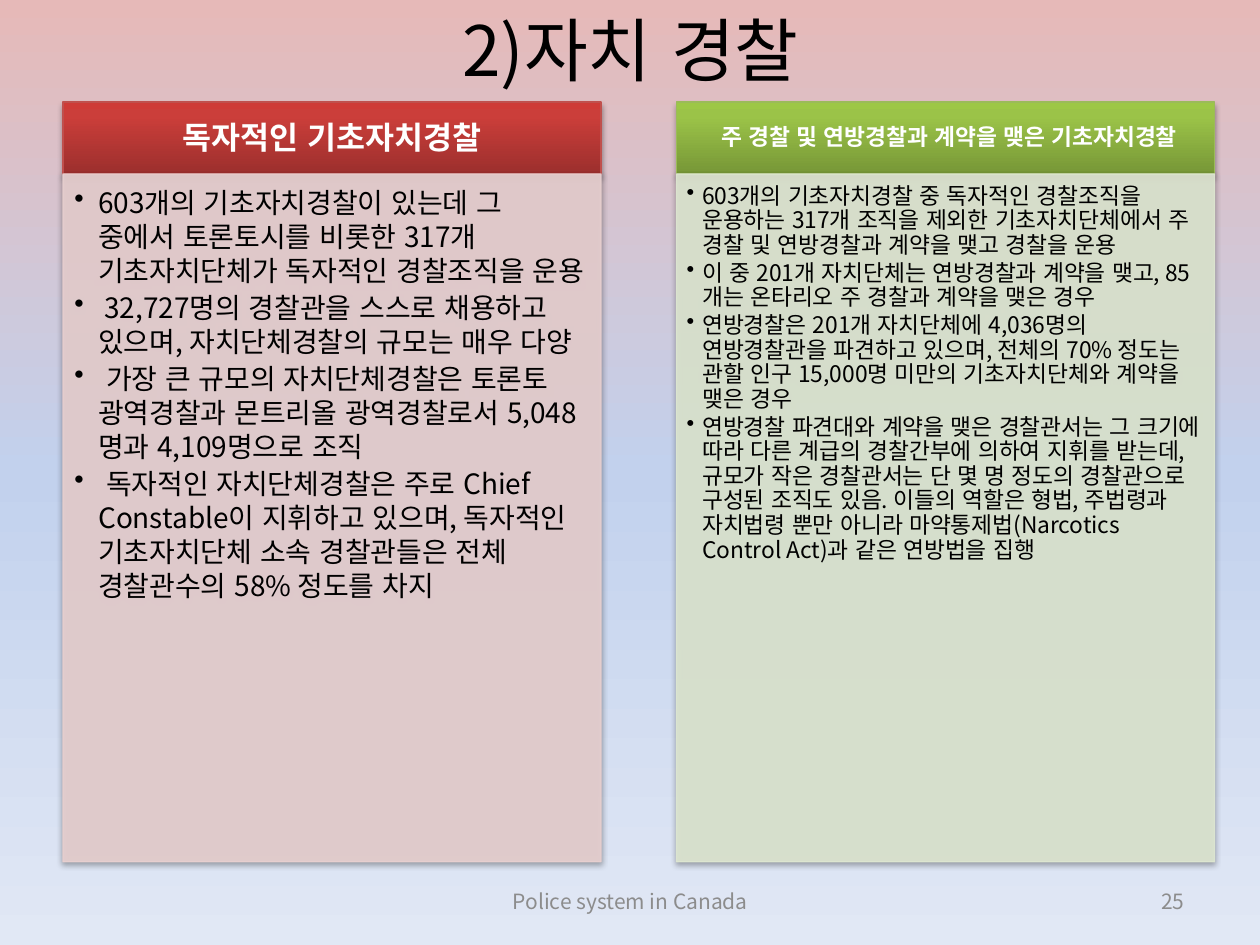
from dataclasses import dataclass

from lxml.etree import SubElement
from pptx import Presentation
from pptx.dml.color import RGBColor
from pptx.enum.lang import MSO_LANGUAGE_ID as Language
from pptx.enum.shapes import MSO_SHAPE as ShapeKind
from pptx.enum.text import MSO_ANCHOR as Anchor, PP_ALIGN as Align
from pptx.oxml.ns import qn
from pptx.util import Pt

FONT = "Noto Sans CJK KR"
COLORS = {
    "black": "000000",
    "white": "FFFFFF",
    "gray": "8C8C8C",
    "red line": "C0504D",
    "red panel": "E8D0D0",
    "green line": "9BBB59",
    "green panel": "DEE7D1",
}
GRADIENTS = {
    "background": {0: "E6B9B8", 50: "C2D1ED", 100: "E1E8F5"},
    "red": {0: "9C2F2D", 80: "CB3E3A", 100: "CE3B37"},
    "green": {0: "779737", 80: "9BC348", 100: "9DC746"},
}
COLUMN_WIDTH = 307.5
HEADER_TOP, HEADER_HEIGHT = 58.3, 41.1
PANEL_HEIGHT = 393.1


@dataclass(frozen=True)
class Label:
    text: str
    left: float
    top: float
    width: float
    height: float
    size: float
    color: str
    align: Align


@dataclass(frozen=True)
class Column:
    heading: str
    items: tuple[str, ...]
    left: float
    hue: str
    heading_size: float
    heading_insets: tuple[float, ...]
    size: float
    line_pitch: float
    indent: float
    insets: tuple[float, ...]


LABELS = (
    Label("2)자치 경찰 ", 161.3, 0, 409, 55.4, 39.6, "black", Align.CENTER),
    Label("Police system in Canada", 246.2, 500.4, 228.2, 28.8, 12, "gray", Align.CENTER),
    Label("25", 516.2, 500.4, 167.8, 28.8, 12, "gray", Align.RIGHT),
)
COLUMNS = (
    Column(
        "독자적인 기초자치경찰",
        (
            "603개의 기초자치경찰이 있는데 그 중에서 토론토시를 비롯한 317개 기초자치단체가 독자적인 경찰조직을 운용",
            " 32,727명의 경찰관을 스스로 채용하고 있으며, 자치단체경찰의 규모는 매우 다양",
            " 가장 큰 규모의 자치단체경찰은 토론토 광역경찰과 몬트리올 광역경찰로서 5,048명과 4,109명으로 조직",
            " 독자적인 자치단체경찰은 주로 Chief Constable이 지휘하고 있으며, 독자적인 기초자치단체 소속 "
            "경찰관들은 전체 경찰관수의 58% 정도를 차지",
        ),
        36, "red", 18, (10, 5.8, 10, 5.8), 16, 19.4, 13.7, (6.5, 6.5, 8.6, 10),
    ),
    Column(
        " 주 경찰 및 연방경찰과 계약을 맺은 기초자치경찰",
        (
            "603개의 기초자치경찰 중 독자적인 경찰조직을 운용하는 317개 조직을 제외한 기초자치단체에서 "
            "주 경찰 및 연방경찰과 계약을 맺고 경찰을 운용",
            "이 중 201개 자치단체는 연방경찰과 계약을 맺고, 85개는 온타리오 주 경찰과 계약을 맺은 경우",
            "연방경찰은 201개 자치단체에 4,036명의 연방경찰관을 파견하고 있으며, 전체의 70% 정도는 "
            "관할 인구 15,000명 미만의 기초자치단체와 계약을 맺은 경우",
            "연방경찰 파견대와 계약을 맺은 경찰관서는 그 크기에 따라 다른 계급의 경찰간부에 의하여 지휘를 받는데, "
            "규모가 작은 경찰관서는 단 몇 명 정도의 경찰관으로 구성된 조직도 있음. 이들의 역할은 형법, 주법령과 "
            "자치법령 뿐만 아니라 마약통제법(Narcotics Control Act)과 같은 연방법을 집행",
        ),
        386.6, "green", 13, (7.2, 4.3, 7.2, 4.3), 13, 14.05, 8.9, (5.8, 5.8, 7.2, 7.9),
    ),
)


def rgb(name: str) -> RGBColor:
    return RGBColor.from_string(COLORS[name])


def format_runs(paragraph, size: float, color: str, bold: bool = False) -> None:
    for run in paragraph.runs:
        font = run.font
        font.size, font.bold, font.name = Pt(size), bold, FONT
        font.color.rgb = rgb(color)
        font.language_id = Language.KOREAN
        SubElement(font._element, qn("a:ea"), typeface=FONT)


def fill_gradient(fill, element, stops: dict[int, str], angle: float) -> None:
    fill.gradient()
    fill.gradient_angle = angle
    stop_list = next(element.iter(qn("a:gsLst")))
    for stop in list(stop_list):
        stop_list.remove(stop)
    for position, color in stops.items():
        stop = SubElement(stop_list, qn("a:gs"), pos=str(position * 1000))
        SubElement(stop, qn("a:srgbClr"), val=color)


def add_block(slide, left: float, top: float, height: float, line: str, insets: tuple[float, ...]):
    shape = slide.shapes.add_shape(
        ShapeKind.RECTANGLE, Pt(left), Pt(top), Pt(COLUMN_WIDTH), Pt(height)
    )
    shape.line.color.rgb = rgb(line)
    shape.line.width = Pt(0.75)
    shape.shadow.inherit = False
    effects = next(shape.element.iter(qn("a:effectLst")))
    shadow = SubElement(
        effects, qn("a:outerShdw"), blurRad=str(Pt(3.1)), dist=str(Pt(1.8)),
        dir="5400000", rotWithShape="0",
    )
    color = SubElement(shadow, qn("a:srgbClr"), val=COLORS["black"])
    SubElement(color, qn("a:alpha"), val="35000")
    frame = shape.text_frame
    frame.word_wrap = True
    frame.margin_left, frame.margin_top, frame.margin_right, frame.margin_bottom = map(Pt, insets)
    return shape


def add_heading(slide, column: Column) -> None:
    shape = add_block(
        slide, column.left, HEADER_TOP, HEADER_HEIGHT, f"{column.hue} line", column.heading_insets
    )
    fill_gradient(shape.fill, shape.element, GRADIENTS[column.hue], 90)
    frame = shape.text_frame
    frame.vertical_anchor = Anchor.MIDDLE
    frame.text = column.heading
    paragraph = frame.paragraphs[0]
    paragraph.alignment = Align.CENTER
    paragraph.line_spacing = Pt(column.heading_size * 1.1)
    format_runs(paragraph, column.heading_size, "white", bold=True)


def add_panel(slide, column: Column) -> None:
    color = f"{column.hue} panel"
    shape = add_block(
        slide, column.left, HEADER_TOP + HEADER_HEIGHT, PANEL_HEIGHT, color, column.insets
    )
    shape.fill.solid()
    shape.fill.fore_color.rgb = rgb(color)
    for tint in shape.element.iter(qn("a:srgbClr")):
        if tint.get("val") == COLORS[color]:
            SubElement(tint, qn("a:alpha"), val="90000")
    frame = shape.text_frame
    frame.vertical_anchor = Anchor.TOP
    frame.text = "\n".join(column.items)
    for paragraph in frame.paragraphs:
        paragraph.alignment = Align.LEFT
        paragraph.line_spacing = Pt(column.line_pitch)
        paragraph.space_after = Pt(1.8)
        properties = paragraph._p.get_or_add_pPr()
        properties.set("marL", str(Pt(column.indent)))
        properties.set("indent", str(Pt(-column.indent)))
        SubElement(properties, qn("a:buChar"), char="•")
        format_runs(paragraph, column.size, "black")


def add_label(slide, label: Label) -> None:
    shape = slide.shapes.add_textbox(
        Pt(label.left), Pt(label.top), Pt(label.width), Pt(label.height)
    )
    frame = shape.text_frame
    frame.word_wrap = True
    frame.vertical_anchor = Anchor.MIDDLE
    frame.text = label.text
    paragraph = frame.paragraphs[0]
    paragraph.alignment = label.align
    format_runs(paragraph, label.size, label.color)


def main() -> None:
    presentation = Presentation()
    presentation.slide_width, presentation.slide_height = Pt(720), Pt(540)
    slide = presentation.slides.add_slide(presentation.slide_layouts[6])
    fill_gradient(slide.background.fill, slide.element, GRADIENTS["background"], 270)
    title, *footers = LABELS
    add_label(slide, title)
    for column in COLUMNS:
        add_heading(slide, column)
        add_panel(slide, column)
    for footer in footers:
        add_label(slide, footer)
    presentation.save("out.pptx")


if __name__ == "__main__":
    main()
